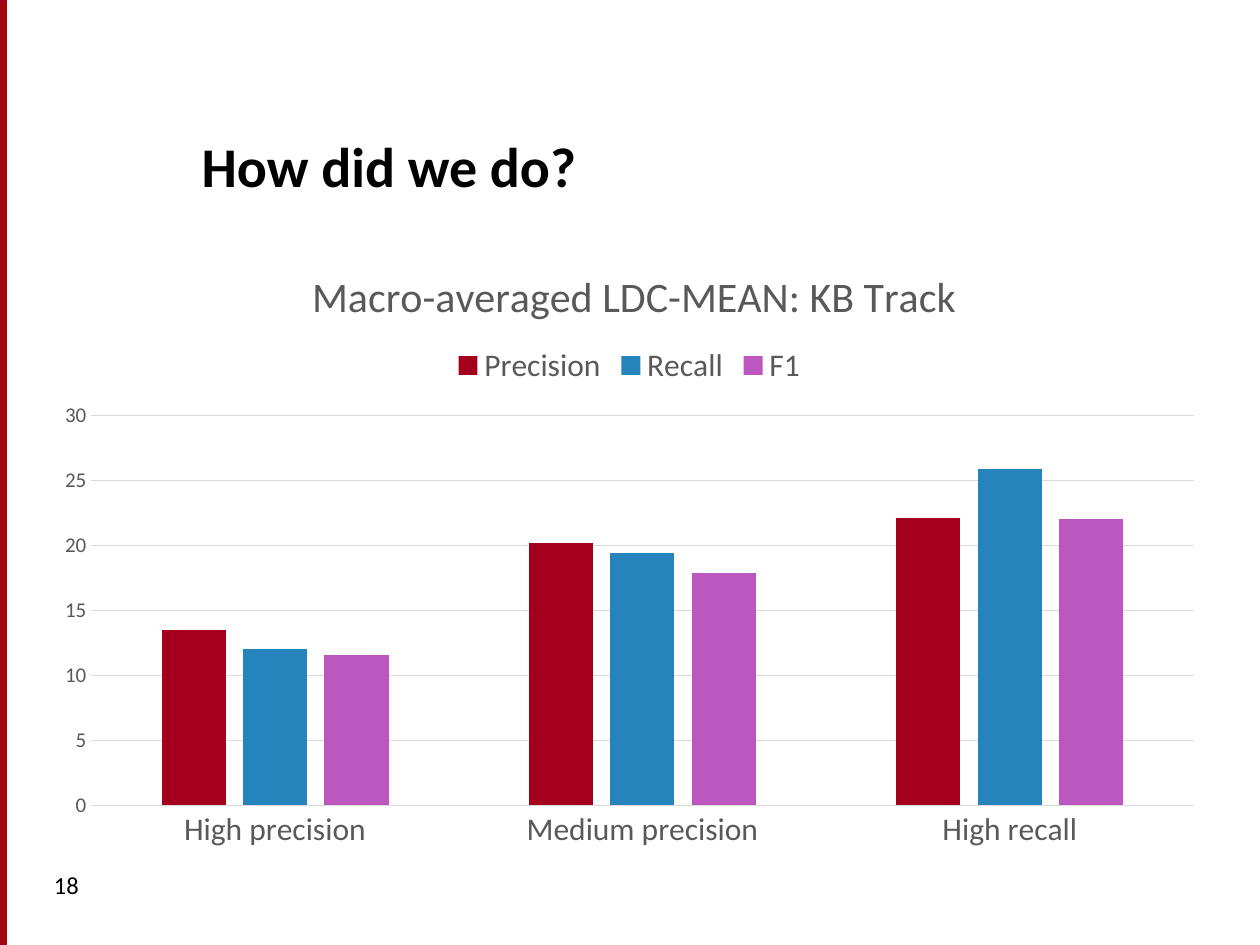
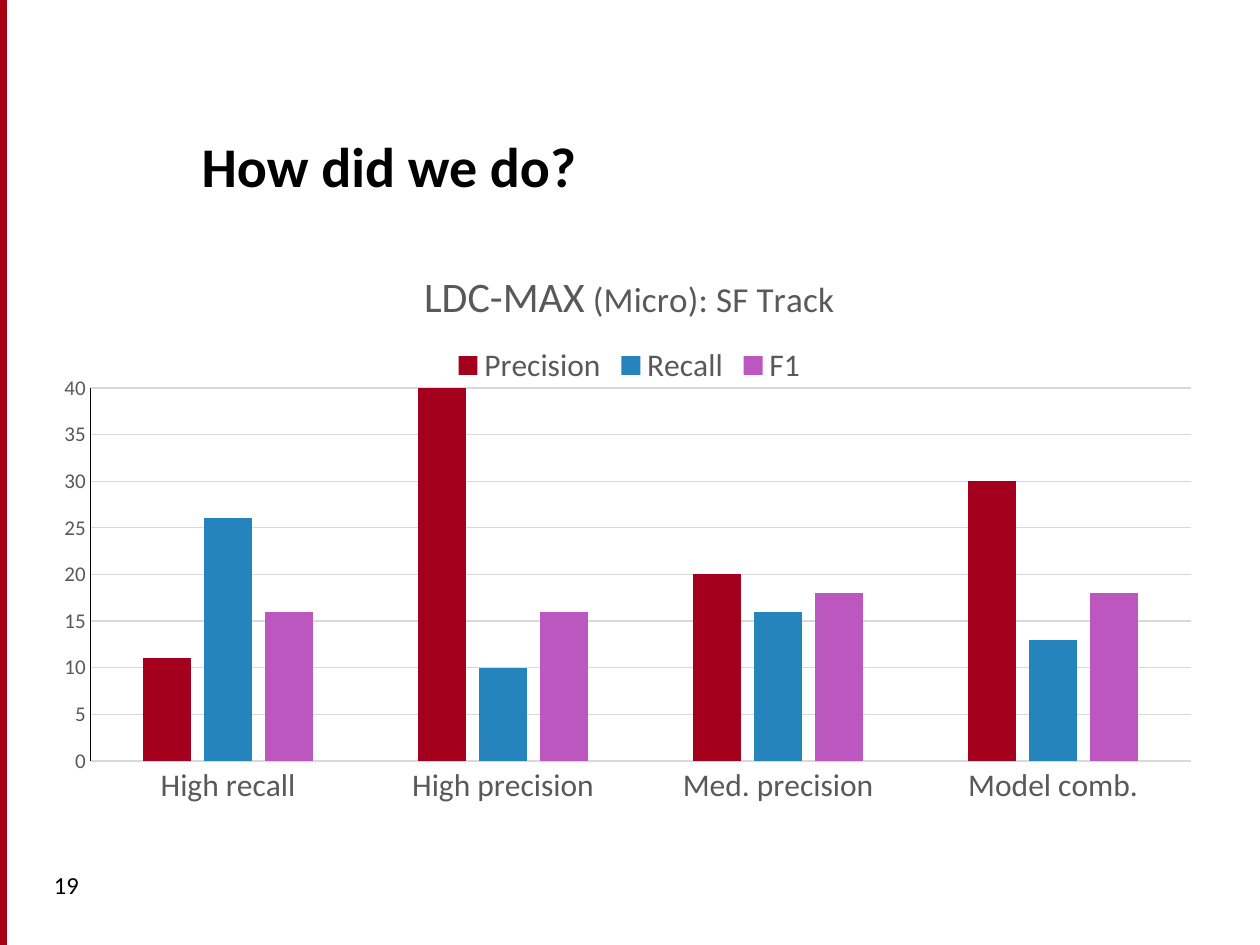
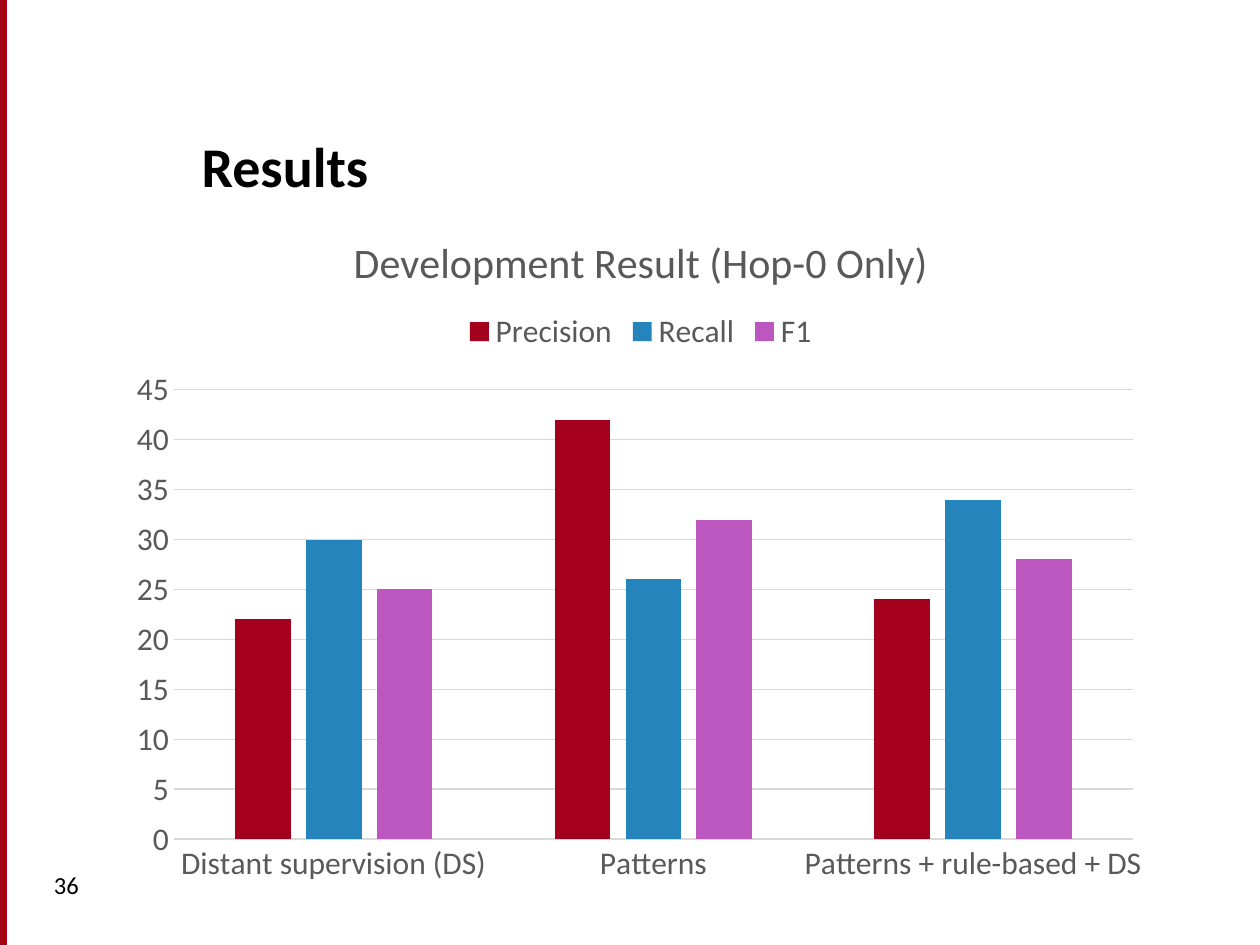
from lxml import etree
from pptx import Presentation
from pptx.chart.data import CategoryChartData
from pptx.dml.color import RGBColor
from pptx.enum.chart import XL_CHART_TYPE as ChartType
from pptx.enum.chart import XL_LEGEND_POSITION as LegendPos
from pptx.enum.chart import XL_TICK_MARK as Tick
from pptx.enum.shapes import MSO_SHAPE as Shape
from pptx.enum.text import MSO_ANCHOR as Anchor
from pptx.enum.text import PP_ALIGN as Align
from pptx.oxml.ns import qn
from pptx.util import Inches, Pt

FONT = "Calibri"
BLACK, GRAY, GRID = "000000", "595959", "D9D9D9"
BAND_FILL, BAND_LINE = "A40508", "A4001D"
SERIES = [("Precision", "A4001D"), ("Recall", "2584BB"), ("F1", "BB57BE")]
WIDE = (0.33, 1.97, 9.33, 4.86)

SLIDES = [
    dict(title="How did we do?", number="18", box=WIDE,
         chart_title=[(" Macro-averaged ", 24), ("LDC-MEAN: KB Track", 24)],
         cats=["High precision", "Medium precision", "High recall"],
         values=[(13.5, 20.2, 22.1), (12, 19.4, 25.9), (11.6, 17.9, 22)],
         top=30, value_size=12),
    dict(title="How did we do?", number="19", box=WIDE,
         chart_title=[("LDC-MAX", 24), (" (Micro): SF Track", 20)],
         cats=["High recall", "High precision", "Med. precision", "Model comb."],
         values=[(11, 50, 20, 30), (26, 10, 16, 13), (16, 16, 18, 18)],
         plot=(0.39, 1.11, 8.73, 2.96), top=40, value_size=12, axis_line=BLACK),
    dict(title="Results", number="36", box=(0.92, 1.69, 8.33, 5.42),
         chart_title=[("Development Result ", 24), ("(Hop-0 Only)", 24)],
         cats=["Distant supervision (DS)", "Patterns", "Patterns + rule-based + DS"],
         values=[(22, 42, 24), (30, 26, 34), (25, 32, 28)],
         top=45, value_size=18),
]


def rgb(value):
    return RGBColor.from_string(value)


def inches(box):
    return [Inches(n) for n in box]


def style(font, size, color=GRAY, bold=False):
    font.name, font.size, font.bold = FONT, Pt(size), bold
    font.color.rgb = rgb(color)


def write(tf, runs, color=BLACK, bold=False, align=None):
    """Fill the first paragraph with (text, size) runs."""
    p = tf.paragraphs[0]
    p.alignment = align
    for text, size in runs:
        r = p.add_run()
        r.text = text
        style(r.font, size, color, bold)


def draw_line(line, color):
    if color:
        line.color.rgb = rgb(color)
        line.width = Pt(0.75)
    else:
        line.fill.background()


def add_band(prs, slide):
    """Put the left band on the master, behind its placeholders."""
    sp = slide.shapes.add_shape(Shape.RECTANGLE, 0, 0, Inches(0.05), prs.slide_height)
    sp.shadow.inherit = False
    sp.fill.solid()
    sp.fill.fore_color.rgb = rgb(BAND_FILL)
    draw_line(sp.line, BAND_LINE)
    prs.slide_master.shapes._spTree.insert(2, sp._element)


def place_plot(chart, plot, box):
    """Fix the inner plot area, given in inches within the chart's box."""
    area = chart._chartSpace.find(".//" + qn("c:plotArea"))
    for old in area.findall(qn("c:layout")):
        area.remove(old)
    layout = etree.Element(qn("c:layout"))
    manual = etree.SubElement(layout, qn("c:manualLayout"))
    settings = [("layoutTarget", "inner"), ("xMode", "edge"), ("yMode", "edge")]
    shares = [n / whole for n, whole in zip(plot, box[2:] * 2)]
    for tag, value in settings + list(zip("xywh", shares)):
        etree.SubElement(manual, qn("c:" + tag)).set("val", str(value))
    area.insert(0, layout)


def add_column_chart(slide, item):
    data = CategoryChartData()
    data.categories = item["cats"]
    for (name, _), values in zip(SERIES, item["values"]):
        data.add_series(name, values)
    chart = slide.shapes.add_chart(
        ChartType.COLUMN_CLUSTERED, *inches(item["box"]), data).chart
    style(chart.font, 10, BLACK)
    chart.has_title = True
    write(chart.chart_title.text_frame, item["chart_title"], GRAY)
    chart.chart_title.include_in_layout = False
    chart.has_legend = True
    chart.legend.position = LegendPos.TOP
    chart.legend.include_in_layout = False
    style(chart.legend.font, 18)

    plot = chart.plots[0]
    plot.gap_width, plot.overlap, plot.vary_by_categories = 219, -27, False
    for series, (_, color) in zip(plot.series, SERIES):
        series.format.fill.solid()
        series.format.fill.fore_color.rgb = rgb(color)

    cat, val = chart.category_axis, chart.value_axis
    axes = [(cat, 18, GRID), (val, item["value_size"], item.get("axis_line"))]
    for axis, size, color in axes:
        axis.major_tick_mark = axis.minor_tick_mark = Tick.NONE
        style(axis.tick_labels.font, size)
        draw_line(axis.format.line, color)
    val.minimum_scale, val.maximum_scale, val.major_unit = 0, item["top"], 5
    val.has_major_gridlines = True
    draw_line(val.major_gridlines.format.line, GRID)
    if "plot" in item:
        place_plot(chart, item["plot"], item["box"])


def add_slide(prs, item):
    slide = prs.slides.add_slide(prs.slide_layouts[5])
    title = slide.shapes.title
    title.left, title.top, title.width, title.height = inches((1.5, 0.55, 8.17, 1.08))
    title.text_frame.vertical_anchor = Anchor.BOTTOM
    write(title.text_frame, [(item["title"], 32)], bold=True, align=Align.LEFT)
    number = slide.shapes.add_textbox(*inches((0.33, 6.86, 2.17, 0.5)))
    number.text_frame.word_wrap = True
    write(number.text_frame, [(item["number"], 14)])
    add_column_chart(slide, item)
    return slide


def main():
    prs = Presentation()
    prs.slide_width, prs.slide_height = Inches(10), Inches(7.5)
    slides = [add_slide(prs, item) for item in SLIDES]
    add_band(prs, slides[0])
    prs.save("out.pptx")


if __name__ == "__main__":
    main()
